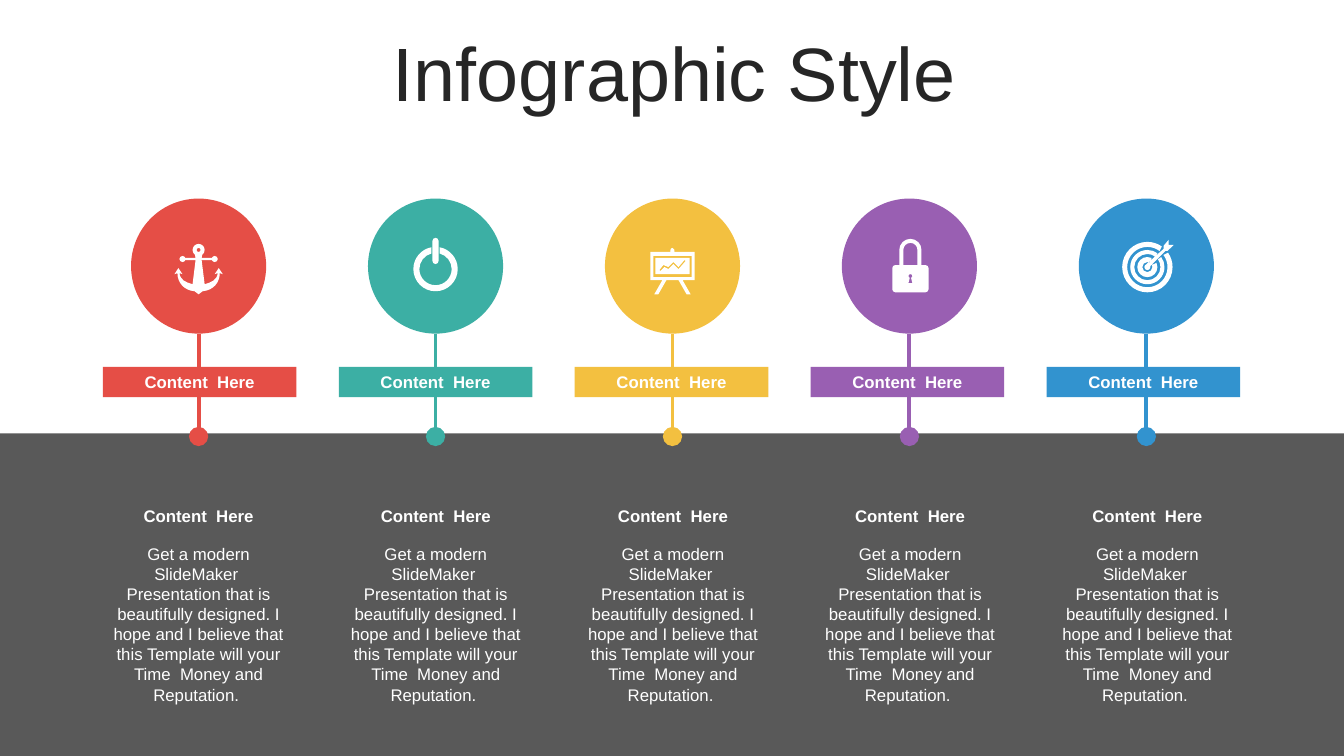
from dataclasses import dataclass
from math import ceil, cos, floor, radians, sin, tan
from typing import NamedTuple

from lxml.etree import SubElement
from pptx import Presentation
from pptx.dml.color import RGBColor
from pptx.enum.shapes import MSO_CONNECTOR as Connector, MSO_SHAPE as Preset
from pptx.enum.text import MSO_ANCHOR as Anchor, PP_ALIGN as Align
from pptx.oxml.ns import qn
from pptx.util import Inches, Pt

COLORS = {
    "red": "E54E46", "teal": "3CAFA4", "yellow": "F3C040", "purple": "995FB2",
    "blue": "3293CF", "band": "595959", "title": "262626", "white": "FFFFFF",
}
FONT = "Arial"
HEADING = "Content  Here"
BODY = ("Get a modern SlideMaker  Presentation that is beautifully designed. "
        "I hope and I believe that this Template will your Time  Money and Reputation. ")

FIRST_CENTER, COLUMN_STEP, LABEL_STEP = 1.97, 2.35, 2.34
FIRST_CAPTION, LAST_CAPTION = 1.01, 10.42
CIRCLE_SIZE, CIRCLE_TOP, COLUMN_WIDTH = 1.34, 1.97, 1.92
ICON_Y = 2.65


class Node(NamedTuple):
    x: float
    y: float
    control: bool = False


Outline = list[Node]


@dataclass
class Column:
    color: str
    icon: list[Outline]
    icon_shift: float = 0


# Outline geometry, in inches around the circle centre
def line(*points: tuple[float, float]) -> Outline:
    return [Node(x, y) for x, y in points]


def arc(cx: float, cy: float, r: float, start: float, end: float) -> Outline:
    """Cubic curves, split wherever the arc crosses an axis."""
    sign = 1 if end > start else -1
    low, high = sorted((start, end))
    crossings = [90 * k for k in range(floor(low / 90) + 1, ceil(high / 90))]
    stops = [start, *crossings[::sign], end]
    nodes = line((cx + r * cos(radians(start)), cy + r * sin(radians(start))))
    for a, b in zip(map(radians, stops), map(radians, stops[1:])):
        h = 4 / 3 * tan((b - a) / 4)
        nodes += [
            Node(cx + r * (cos(a) - h * sin(a)), cy + r * (sin(a) + h * cos(a)), True),
            Node(cx + r * (cos(b) + h * sin(b)), cy + r * (sin(b) - h * cos(b)), True),
            Node(cx + r * cos(b), cy + r * sin(b)),
        ]
    return nodes


def open_ring(cy: float, outer: float, inner: float, facing: float,
              outer_gap: float, inner_gap: float) -> Outline:
    return (arc(0, cy, outer, facing + outer_gap, facing + 360 - outer_gap)
            + arc(0, cy, inner, facing + 360 - inner_gap, facing + inner_gap))


def mirrored(right_half: Outline) -> Outline:
    return right_half + [Node(-n.x, n.y, n.control) for n in reversed(right_half)]


def box(half_width: float, top: float, bottom: float) -> Outline:
    return mirrored(line((half_width, top), (half_width, bottom)))


ANCHOR = [
    mirrored(arc(0, -.17, .06, -90, 53) + line((.03, -.09)) + arc(.16, -.08, .03, 200, 520)
             + line((.03, -.07), (.06, .17)) + [Node(.13, .15, True), Node(.18, .13, True)]
             + line((.19, .06), (.16, .07), (.2, .01), (.24, .07), (.21, .06))
             + [Node(.21, .15, True), Node(.15, .23, True)] + line((.04, .24), (0, .27))),
    arc(0, -.17, .02, 0, 360),
]
POWER = [
    open_ring(.02, .22, .16, -90, 10.5, 14.5),
    arc(0, -.26, .03, 180, 360) + arc(0, -.06, .03, 0, 180),
]
BOARD = [
    mirrored(arc(0, -.17, .02, -90, 0) + line((.02, -.15), (.22, -.15), (.22, .13), (.1, .13),
                                              (.18, .27), (.14, .27), (.06, .13))),
    box(.19, -.11, .1),
    box(.17, -.09, .07),
    line((-.13, .03), (-.09, -.02), (-.04, 0), (.01, -.05), (.06, 0), (.12, -.07),
         (.13, -.06), (.06, .02), (.01, -.03), (-.04, .02), (-.08, 0), (-.12, .04)),
]
LOCK = [
    mirrored(arc(0, -.17, .11, -90, 0) + line((.11, -.02)) + arc(.15, .01, .03, -90, 0)
             + arc(.15, .22, .03, 0, 90)),
    arc(0, -.17, .07, 180, 360) + line((.07, -.02), (-.07, -.02)),
    arc(0, .09, .02, 110, 430) + line((.02, .16), (-.02, .16)),
]
TARGET = [
    open_ring(0, .25, .2, -45, 10, 8),
    open_ring(0, .17, .13, -45, 9, 9),
    open_ring(0, .1, .05, -45, 20, 20),
    arc(0, 0, .03, -20, 250) + line((.16, -.18), (.16, -.21), (.21, -.27), (.21, -.22),
                                    (.26, -.22), (.2, -.16), (.18, -.16)),
]
COLUMNS = [
    Column("red", ANCHOR), Column("teal", POWER), Column("yellow", BOARD),
    Column("purple", LOCK, .01), Column("blue", TARGET, .01),
]


# Drawing helpers
def rgb(color: str) -> RGBColor:
    return RGBColor.from_string(COLORS[color])


def paint(shape, color: str) -> None:
    shape.fill.solid()
    shape.fill.fore_color.rgb = rgb(color)
    shape.line.fill.background()
    shape.shadow.inherit = False


def add_block(shapes, preset, left: float, top: float, width: float, height: float, color: str):
    block = shapes.add_shape(preset, *map(Inches, (left, top, width, height)))
    paint(block, color)
    return block


def write(shape, text: str, size: float = 12, color: str = "white",
          bold: bool = False, anchor=Anchor.MIDDLE):
    frame = shape.text_frame
    frame.word_wrap = True
    frame.vertical_anchor = anchor
    frame.text = text
    paragraph = frame.paragraphs[0]
    paragraph.alignment = Align.CENTER
    font = paragraph.runs[0].font
    font.name, font.size, font.bold = FONT, Pt(size), bold
    font.color.rgb = rgb(color)
    return paragraph


def add_text_box(shapes, left: float, top: float, width: float, height: float):
    return shapes.add_textbox(*map(Inches, (left, top, width, height)))


def add_stem(shapes, x: float, color: str) -> None:
    stem = shapes.add_connector(Connector.STRAIGHT, Inches(x), Inches(3.31), Inches(x), Inches(4.33))
    stem.line.color.rgb = rgb(color)
    stem.line.width = Pt(2.75)
    SubElement(stem.line._get_or_add_ln(), qn("a:tailEnd"), type="oval", w="lg", len="lg")
    SubElement(stem._element.spPr, qn("a:effectLst"))


def add_icon(shapes, outlines: list[Outline], x: float, y: float) -> None:
    placed = [[(Inches(x + n.x), Inches(y + n.y)) for n in outline] for outline in outlines]
    builder = shapes.build_freeform(*placed[0][0])
    for number, points in enumerate(placed):
        if number:
            builder.move_to(*points[0])
        builder.add_line_segments(points[1:], close=True)
    icon = builder.convert_to_shape()
    paint(icon, "white")

    # Two control nodes and the node after them make one curve
    nodes = [node for outline in outlines for node in outline]
    steps = [point.getparent() for point in icon._element.iter(qn("a:pt"))]
    for i in range(len(nodes) - 2):
        if nodes[i].control and nodes[i + 1].control:
            contour = steps[i].getparent()
            bend = SubElement(contour, qn("a:cubicBezTo"))
            steps[i].addprevious(bend)
            for step in steps[i:i + 3]:
                bend.append(step[0])
                contour.remove(step)


def add_column(shapes, index: int, column: Column) -> None:
    center = FIRST_CENTER + index * COLUMN_STEP
    add_block(shapes, Preset.OVAL, center - CIRCLE_SIZE / 2, CIRCLE_TOP,
              CIRCLE_SIZE, CIRCLE_SIZE, column.color)
    add_stem(shapes, center, column.color)
    label = add_block(shapes, Preset.RECTANGLE, 1.02 + index * LABEL_STEP, 3.64,
                      COLUMN_WIDTH, .3, column.color)
    write(label, HEADING, bold=True)
    caption = shapes.add_group_shape().shapes
    left = FIRST_CAPTION + index * (LAST_CAPTION - FIRST_CAPTION) / (len(COLUMNS) - 1)
    write(add_text_box(caption, left, 4.97, COLUMN_WIDTH, .3), HEADING, bold=True)
    write(add_text_box(caption, left, 5.34, COLUMN_WIDTH, 1.72), BODY, anchor=Anchor.TOP)
    add_icon(shapes, column.icon, center + column.icon_shift, ICON_Y)


def main() -> None:
    deck = Presentation()
    deck.slide_width, deck.slide_height = Inches(13.33), Inches(7.5)
    shapes = deck.slides.add_slide(deck.slide_layouts[6]).shapes
    # Title and lower band
    title = write(add_text_box(shapes, .36, .37, 12.66, .79), "Infographic Style", 54, "title")
    title.line_spacing, title.space_before = .9, Pt(10)
    add_block(shapes, Preset.RECTANGLE, 0, 4.3, 13.33, 3.2, "band")
    # Five columns
    for index, column in enumerate(COLUMNS):
        add_column(shapes, index, column)
    deck.save("out.pptx")


if __name__ == "__main__":
    main()
